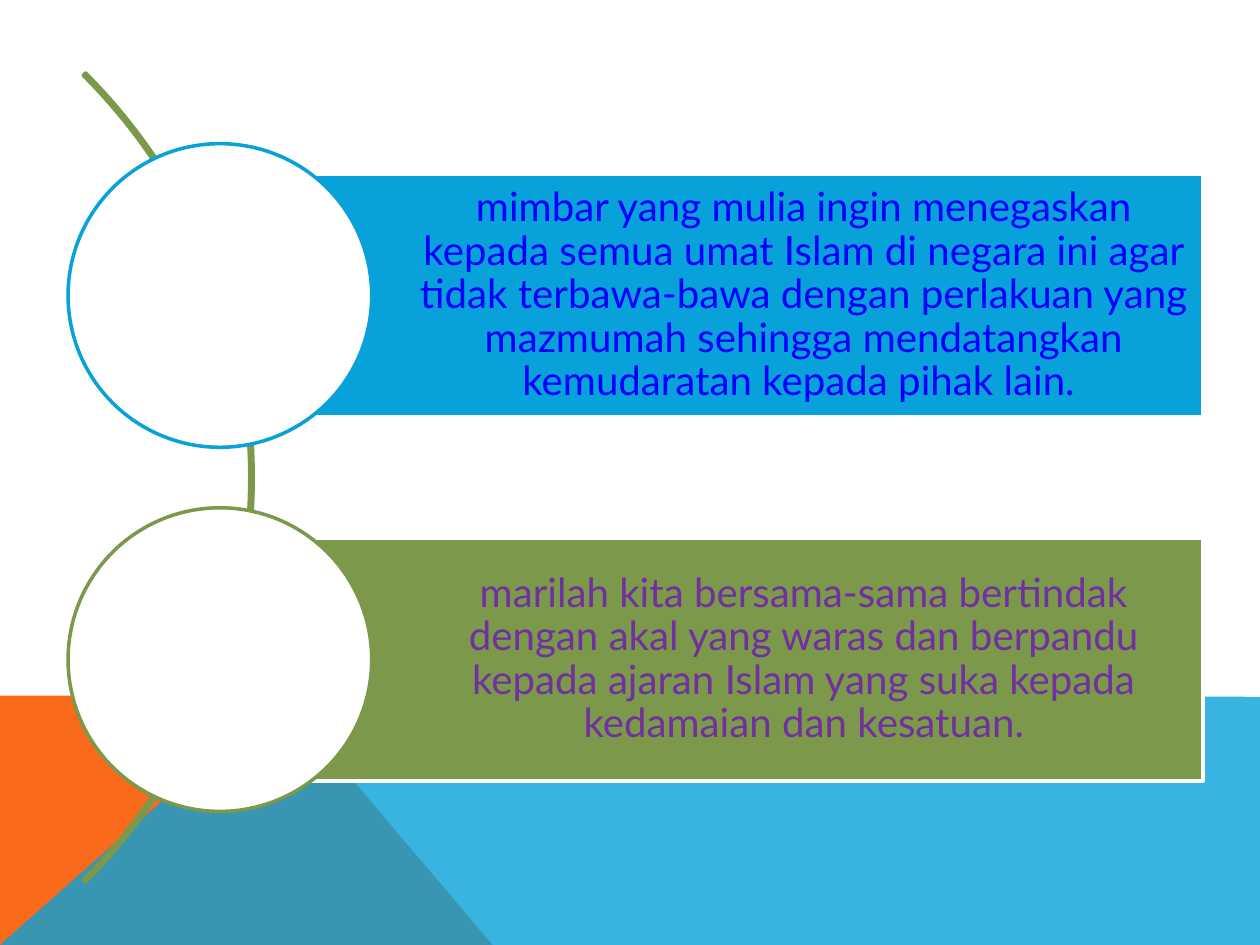
from lxml.etree import SubElement
from pptx import Presentation
from pptx.dml.color import RGBColor
from pptx.enum.shapes import MSO_SHAPE
from pptx.enum.text import MSO_ANCHOR, PP_ALIGN
from pptx.oxml.ns import qn
from pptx.util import Inches, Pt

WHITE = RGBColor(0xFF, 0xFF, 0xFF)
ORANGE = RGBColor(0xF9, 0x6A, 0x1B)
BLUE = RGBColor(0x08, 0xA1, 0xD9)
GREEN = RGBColor(0x7C, 0x98, 0x4A)
INK = RGBColor(0x00, 0x00, 0xFF)
PURPLE = RGBColor(0x70, 0x30, 0xA0)

ITEMS = [
    ("mimbar yang mulia ingin menegaskan kepada semua umat Islam di negara ini "
     "agar tidak terbawa-bawa dengan perlakuan yang mazmumah sehingga "
     "mendatangkan kemudaratan kepada pihak lain. ", BLUE, INK),
    ("marilah kita bersama-sama bertindak dengan akal yang waras dan berpandu "
     "kepada ajaran Islam yang suka kepada kedamaian dan kesatuan.", GREEN, PURPLE),
]


def paint(shape, fill=None, line=None):
    """Set fill and outline; None leaves either one out."""
    shape.shadow.inherit = False
    if fill is None:
        shape.fill.background()
    else:
        shape.fill.solid()
        shape.fill.fore_color.rgb = fill
    if line is None:
        shape.line.fill.background()
    else:
        shape.line.color.rgb = line
        shape.line.width = Pt(2)


def add_shape(slide, kind, left, top, width, height, fill=None, line=None):
    shape = slide.shapes.add_shape(
        kind, Inches(left), Inches(top), Inches(width), Inches(height))
    paint(shape, fill, line)
    return shape


def add_area(slide, points, fill):
    start, *rest = [(Inches(x), Inches(y)) for x, y in points]
    path = slide.shapes.build_freeform(*start, scale=1.0)
    path.add_line_segments(rest, close=True)
    area = path.convert_to_shape()
    paint(area, fill)
    return area


def add_base(slide, left, top, width, height):
    """Orange corner under a translucent blue slope."""
    right, base = left + width, top + height
    peak = left + 2.23
    add_area(slide, [(left, base), (left, top), (peak, top),
                     (left + 3.91, base)], ORANGE)
    slope = add_area(slide, [(left, base), (peak, top), (right, top + 0.01),
                             (right, base)], BLUE)
    tint = slope.fill._xPr.find(qn("a:solidFill"))[0]
    SubElement(tint, qn("a:alpha")).set("val", "80000")


def add_item(slide, left, top, width, size, text, color, ink):
    """Text bar with a circle of the given size over its left end."""
    bar_left, bar_high = left + size / 2, size * 0.8
    bar = add_shape(slide, MSO_SHAPE.RECTANGLE, bar_left, top + size * 0.1,
                    left + width - bar_left, bar_high, color, WHITE)
    frame = bar.text_frame
    frame.word_wrap = True
    frame.vertical_anchor = MSO_ANCHOR.MIDDLE
    frame.margin_left = Inches(1.53)
    frame.margin_right = frame.margin_top = frame.margin_bottom = Inches(0.06)
    para = frame.paragraphs[0]
    para.alignment = PP_ALIGN.CENTER
    para.line_spacing = 0.9
    run = para.add_run()
    run.text = text
    run.font.name = "Lato"
    run.font.size = Pt(23)
    run.font.color.rgb = ink
    add_shape(slide, MSO_SHAPE.OVAL, left, top, size, size, WHITE, color)


def add_list(slide, left, top, width, pitch, size):
    """Items spaced evenly along a thin arc."""
    arc = add_shape(slide, MSO_SHAPE.BLOCK_ARC, -7.07, -0.75, 9.08, 9.08,
                    line=GREEN)
    for index, value in enumerate((189, 27, 0.003)):
        arc.adjustments[index] = value
    for row, item in enumerate(ITEMS):
        add_item(slide, left, top + row * pitch, width, size, *item)


def main():
    deck = Presentation()
    deck.slide_width, deck.slide_height = Inches(10), Inches(7.5)
    slide = deck.slides.add_slide(deck.slide_layouts[6])
    add_base(slide, 0, 5.52, 10, 1.98)
    add_list(slide, 0.54, 1.14, 9.01, 2.89, 2.41)
    deck.save("out.pptx")


if __name__ == "__main__":
    main()
